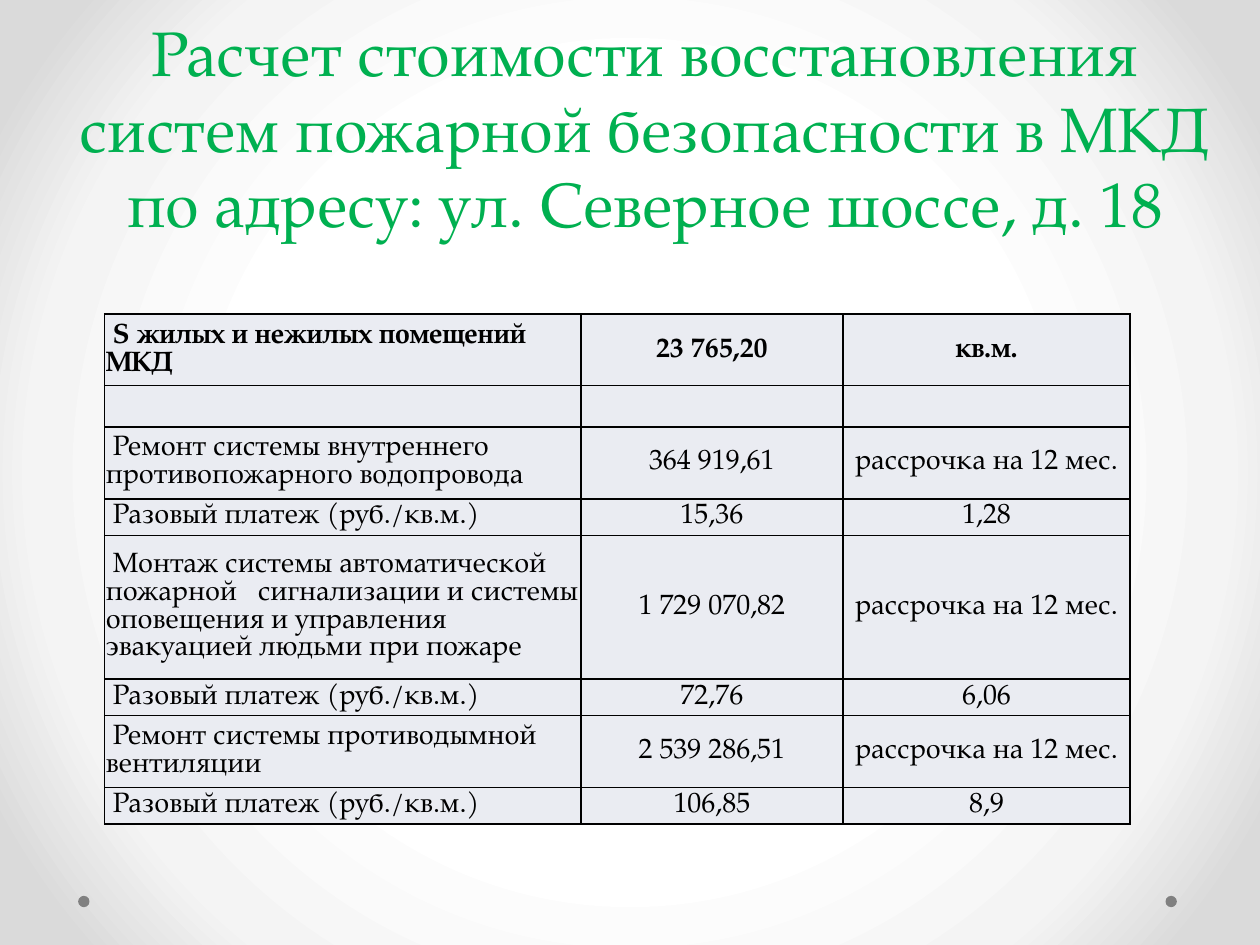
from lxml import etree
from pptx import Presentation
from pptx.dml.color import RGBColor
from pptx.enum.shapes import MSO_SHAPE
from pptx.enum.text import MSO_ANCHOR, MSO_AUTO_SIZE, PP_ALIGN
from pptx.oxml import parse_xml
from pptx.oxml.ns import qn
from pptx.util import Inches, Pt

OVAL = MSO_SHAPE.OVAL
MIDDLE, BOTTOM = MSO_ANCHOR.MIDDLE, MSO_ANCHOR.BOTTOM
LEFT, CENTER = PP_ALIGN.LEFT, PP_ALIGN.CENTER
NO_FIT = MSO_AUTO_SIZE.NONE

GREEN = RGBColor(0x00, 0xB0, 0x50)
BLACK = RGBColor(0x00, 0x00, 0x00)
GRAY = RGBColor(0x80, 0x80, 0x80)
CELL_FILL = RGBColor(0xEA, 0xEC, 0xF2)
BACKGROUND_STOPS = [
    (50, RGBColor(0xFF, 0xFF, 0xFF)),
    (76, RGBColor(0xF4, 0xF4, 0xF4)),
    (92, RGBColor(0xDA, 0xDA, 0xDA)),
]

FONT = "TeX Gyre Pagella"
DRAWING = "http://schemas.openxmlformats.org/drawingml/2006/main"
TITLE = ("Расчет стоимости восстановления систем пожарной безопасности "
         "в МКД по адресу: ул. Северное шоссе, д. 18")
PAYMENT = " Разовый платеж (руб./кв.м.)"
INSTALMENT = "рассрочка на 12 мес."
COLUMN_WIDTHS = [3.78, 2.08, 2.28]
ROWS = [
    (0.57, [" S жилых и нежилых помещений МКД", "23 765,20", "кв.м."]),
    (0.33, ["", "", ""]),
    (0.57, [" Ремонт системы внутреннего противопожарного водопровода",
            "364 919,61", INSTALMENT]),
    (0.29, [PAYMENT, "15,36", "1,28"]),
    (1.14, [" Монтаж системы автоматической пожарной   сигнализации и системы "
            "оповещения и управления эвакуацией людьми при пожаре",
            "1 729 070,82", INSTALMENT]),
    (0.29, [PAYMENT, "72,76", "6,06"]),
    (0.57, [" Ремонт системы противодымной вентиляции",
            "2 539 286,51", INSTALMENT]),
    (0.29, [PAYMENT, "106,85", "8,9"]),
]


def paint_background(page):
    page.background.fill.gradient()
    old = page.background.fill._xPr.find(qn("a:gradFill"))
    stops = "".join(
        f'<a:gs pos="{share * 1000}"><a:srgbClr val="{color}"/></a:gs>'
        for share, color in BACKGROUND_STOPS)
    gradient = parse_xml(
        f'<a:gradFill xmlns:a="{DRAWING}" rotWithShape="1"><a:gsLst>{stops}</a:gsLst>'
        '<a:path path="circle"><a:fillToRect l="50000" t="50000" r="50000" b="50000"/>'
        '</a:path></a:gradFill>')
    old.getparent().replace(old, gradient)


def style_paragraph(para, size, color, align, spacing, bold=False):
    para.alignment = align
    para.line_spacing = Pt(spacing)
    para.font.name = FONT
    para.font.size = Pt(size)
    para.font.bold = bold
    para.font.color.rgb = color


def add_dot(page, left):
    dot = page.shapes.add_shape(
        OVAL, Inches(left), Inches(7.11), Inches(0.09), Inches(0.09))
    dot.shadow.inherit = False
    dot.fill.solid()
    dot.fill.fore_color.rgb = GRAY
    dot.line.fill.background()


def set_title(page):
    title = page.shapes.title
    title.left, title.top = Inches(0.43), Inches(0.21)
    title.width, title.height = Inches(9.38), Inches(1.75)
    frame = title.text_frame
    frame.text = TITLE
    frame.word_wrap = True
    frame.auto_size = NO_FIT
    frame.vertical_anchor = BOTTOM
    style_paragraph(frame.paragraphs[0], 36, GREEN, CENTER, 43.4)


def add_borders(cell):
    properties = cell._tc.get_or_add_tcPr()
    for index, side in enumerate(("lnL", "lnR", "lnT", "lnB")):
        line = etree.Element(qn(f"a:{side}"), w=str(Pt(1)))
        fill = etree.SubElement(line, qn("a:solidFill"))
        etree.SubElement(fill, qn("a:srgbClr"), val=str(BLACK))
        properties.insert(index, line)


def fill_cell(cell, text, align, bold):
    cell.text = text
    cell.vertical_anchor = MIDDLE
    cell.margin_left = cell.margin_right = cell.margin_top = Inches(0.01)
    cell.margin_bottom = 0
    cell.fill.solid()
    cell.fill.fore_color.rgb = CELL_FILL
    style_paragraph(cell.text_frame.paragraphs[0], 16, BLACK, align, 16, bold)
    add_borders(cell)


def add_cost_table(page):
    heights = [height for height, _ in ROWS]
    table = page.shapes.add_table(
        len(ROWS), len(COLUMN_WIDTHS), Inches(0.83), Inches(2.49),
        Inches(sum(COLUMN_WIDTHS)), Inches(sum(heights))).table
    table.first_row = table.horz_banding = False
    for column, width in zip(table.columns, COLUMN_WIDTHS):
        column.width = Inches(width)
    for row_index, (height, texts) in enumerate(ROWS):
        table.rows[row_index].height = Inches(height)
        for column_index, text in enumerate(texts):
            fill_cell(table.cell(row_index, column_index), text,
                      CENTER if column_index else LEFT, row_index == 0)


def main():
    deck = Presentation()
    deck.slide_width, deck.slide_height = Inches(10), Inches(7.5)
    page = deck.slides.add_slide(deck.slide_layouts[5])
    paint_background(page)
    for left in (9.25, 0.62):
        add_dot(page, left)
    set_title(page)
    add_cost_table(page)
    deck.save("out.pptx")


if __name__ == "__main__":
    main()
